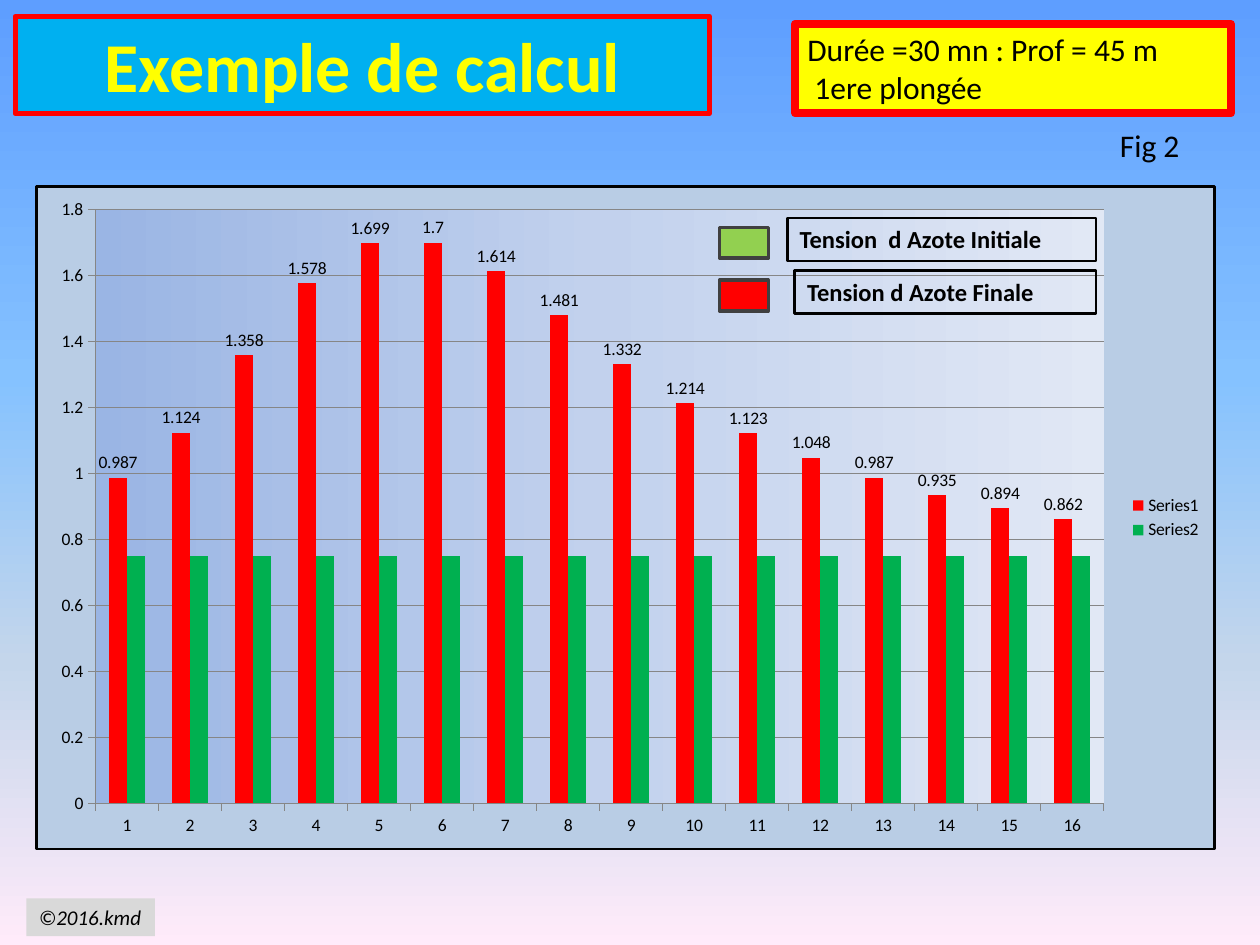
from lxml import etree
from pptx import Presentation
from pptx import util as u
from pptx.chart.data import CategoryChartData
from pptx.dml.color import RGBColor
from pptx.enum import chart as c, shapes, text
from pptx.oxml import parse_xml
from pptx.oxml.ns import nsdecls, qn

BLACK = RGBColor(0, 0, 0)
RED = RGBColor(0xFF, 0, 0)
YELLOW = RGBColor(0xFF, 0xFF, 0)
CYAN = RGBColor(0, 0xB0, 0xF0)
GREEN = RGBColor(0, 0xB0, 0x50)
LIME = RGBColor(0x92, 0xD0, 0x50)
DARK_GREY = RGBColor(0x40, 0x40, 0x40)
GRID_GREY = RGBColor(0x86, 0x86, 0x86)
PALE_GREY = RGBColor(0xD9, 0xD9, 0xD9)
PALE_BLUE = RGBColor(0xB9, 0xCD, 0xE5)
SKY = [(0, RGBColor(0x5E, 0x9E, 0xFF)), (40, RGBColor(0x85, 0xC2, 0xFF)),
       (70, RGBColor(0xC4, 0xD6, 0xEB)), (100, RGBColor(0xFF, 0xEB, 0xFA))]
PLOT = [(0, RGBColor(0x9A, 0xB5, 0xE4)), (50, RGBColor(0xC2, 0xD1, 0xED)),
        (100, RGBColor(0xE1, 0xE8, 0xF5))]
FONT = "Calibri"
WIDTH, HEIGHT = u.Inches(10), u.Inches(7.5)
FINAL = [0.987, 1.124, 1.358, 1.578, 1.699, 1.7, 1.614, 1.481,
         1.332, 1.214, 1.123, 1.048, 0.987, 0.935, 0.894, 0.862]
INITIAL = 0.75


def share(left, top, width, height):
    return (int(WIDTH * left / 100), int(HEIGHT * top / 100),
            int(WIDTH * width / 100), int(HEIGHT * height / 100))


def inside(box, left, top, width, height):
    return (int(box[0] + box[2] * left), int(box[1] + box[3] * top),
            int(box[2] * width), int(box[3] * height))


def gradient(stops, angle):
    marks = "".join(f'<a:gs pos="{place * 1000}"><a:srgbClr val="{color}"/></a:gs>'
                    for place, color in stops)
    return parse_xml(f'<a:gradFill {nsdecls("a")} rotWithShape="1"><a:gsLst>{marks}</a:gsLst>'
                     f'<a:lin ang="{angle * 60000}" scaled="0"/></a:gradFill>')


def paint(shape, fill=None, line=None, weight=0):
    if fill is None:
        shape.fill.background()
    else:
        shape.fill.solid()
        shape.fill.fore_color.rgb = fill
    if line is None:
        shape.line.fill.background()
    else:
        shape.line.color.rgb = line
        shape.line.width = u.Pt(weight)


def write(shape, lines, size, color=BLACK, bold=False, italic=False,
          align=text.PP_ALIGN.LEFT, wrap=True, anchor=text.MSO_ANCHOR.TOP):
    frame = shape.text_frame
    frame.text = "\n".join(lines)
    frame.word_wrap = wrap
    frame.auto_size = text.MSO_AUTO_SIZE.NONE
    frame.vertical_anchor = anchor
    for para in frame.paragraphs:
        para.alignment = align
        font = para.font
        font.name, font.size, font.bold, font.italic = FONT, u.Pt(size), bold, italic
        font.color.rgb = color


def rectangle(page, box, fill=None, line=None, weight=0):
    shape = page.shapes.add_shape(shapes.MSO_SHAPE.RECTANGLE, *box)
    shape.shadow.inherit = False
    paint(shape, fill, line, weight)
    return shape


def add_background(page):
    page.background.fill.solid()
    solid = next(page.element.iter(qn("a:solidFill")))
    solid.getparent().replace(solid, gradient(SKY, 90))


def add_title(page, box):
    title = page.shapes.title
    title.left, title.top, title.width, title.height = box
    paint(title, CYAN, RED, 3)
    write(title, ["Exemple de calcul"], 40, YELLOW, bold=True,
          align=text.PP_ALIGN.CENTER, anchor=text.MSO_ANCHOR.MIDDLE)


def add_conditions(page, box):
    write(rectangle(page, box, YELLOW, RED, 4.5),
          ["Durée =30 mn : Prof = 45 m", " 1ere plongée"], 18)


def style_axis(axis):
    axis.major_tick_mark = c.XL_TICK_MARK.OUTSIDE
    axis.minor_tick_mark = c.XL_TICK_MARK.NONE
    axis.format.line.color.rgb = GRID_GREY


def dress_chart(chart):
    space = chart.element
    area = space.find(f'{qn("c:chart")}/{qn("c:plotArea")}')
    for old in area.findall(qn("c:layout")):
        area.remove(old)
    layout = etree.Element(qn("c:layout"))
    manual = etree.SubElement(layout, qn("c:manualLayout"))
    for tag, value in (("layoutTarget", "inner"), ("xMode", "edge"), ("yMode", "edge"),
                       ("x", "0.05"), ("y", "0.035"), ("w", "0.856"), ("h", "0.896")):
        etree.SubElement(manual, qn(f"c:{tag}")).set("val", value)
    area.insert(0, layout)
    plot_style = etree.SubElement(area, qn("c:spPr"))
    plot_style.append(gradient(PLOT, 0))
    space.find(qn("c:chart")).addnext(parse_xml(
        f'<c:spPr {nsdecls("c", "a")}><a:solidFill><a:srgbClr val="{PALE_BLUE}"/></a:solidFill>'
        f'<a:ln w="{u.Pt(1.5)}"><a:solidFill><a:srgbClr val="{BLACK}"/></a:solidFill></a:ln></c:spPr>'))


def add_tension_chart(page, box):
    data = CategoryChartData()
    data.categories = [str(number + 1) for number in range(len(FINAL))]
    data.add_series("Series1", FINAL)
    data.add_series("Series2", [INITIAL] * len(FINAL))
    chart = page.shapes.add_chart(c.XL_CHART_TYPE.COLUMN_CLUSTERED, *box, data).chart
    chart.has_title = False
    chart.font.name, chart.font.size = FONT, u.Pt(10)
    chart.font.color.rgb = BLACK
    chart.has_legend = True
    chart.legend.position = c.XL_LEGEND_POSITION.RIGHT
    chart.legend.include_in_layout = False
    plot = chart.plots[0]
    plot.gap_width, plot.overlap, plot.vary_by_categories = 150, 0, False
    for series, color in zip(plot.series, (RED, GREEN)):
        series.format.fill.solid()
        series.format.fill.fore_color.rgb = color
    labels = plot.series[0].data_labels
    labels.show_value = True
    labels.position = c.XL_LABEL_POSITION.OUTSIDE_END
    style_axis(chart.category_axis)
    values = chart.value_axis
    style_axis(values)
    values.minimum_scale, values.maximum_scale, values.major_unit = 0, 1.8, 0.2
    values.has_major_gridlines = True
    values.major_gridlines.format.line.color.rgb = GRID_GREY
    dress_chart(chart)


def add_key(page, box):
    entries = [(LIME, "Tension  d Azote Initiale", 0.18),
               (RED, "Tension d Azote Finale", 0.2)]
    for row, (color, label, left) in enumerate(entries):
        top = row * 0.55
        rectangle(page, inside(box, 0, top + 0.1, 0.13, 0.32), color, DARK_GREY, 2)
        write(rectangle(page, inside(box, left, top, 1 - left, 0.45), line=BLACK, weight=1.5),
              [label], 14, bold=True)


def add_figure_number(page, box):
    write(page.shapes.add_textbox(*box), ["Fig 2"], 18)


def add_credit(page, box):
    write(rectangle(page, box, PALE_GREY), ["©2016.kmd"], 12, italic=True, wrap=False)


def main():
    deck = Presentation()
    deck.slide_width, deck.slide_height = WIDTH, HEIGHT
    page = deck.slides.add_slide(deck.slide_layouts[5])
    add_background(page)
    add_title(page, share(1.2, 1.73, 55.1, 10.27))
    add_conditions(page, share(63.1, 2.53, 34.6, 9.47))
    add_figure_number(page, share(87.9, 12.67, 7.9, 5.33))
    add_tension_chart(page, share(2.8, 19.6, 93.7, 70.4))
    add_key(page, share(57.1, 23.07, 29.9, 10.13))
    add_credit(page, share(2.1, 95.07, 10.2, 4))
    deck.save("out.pptx")


if __name__ == "__main__":
    main()
